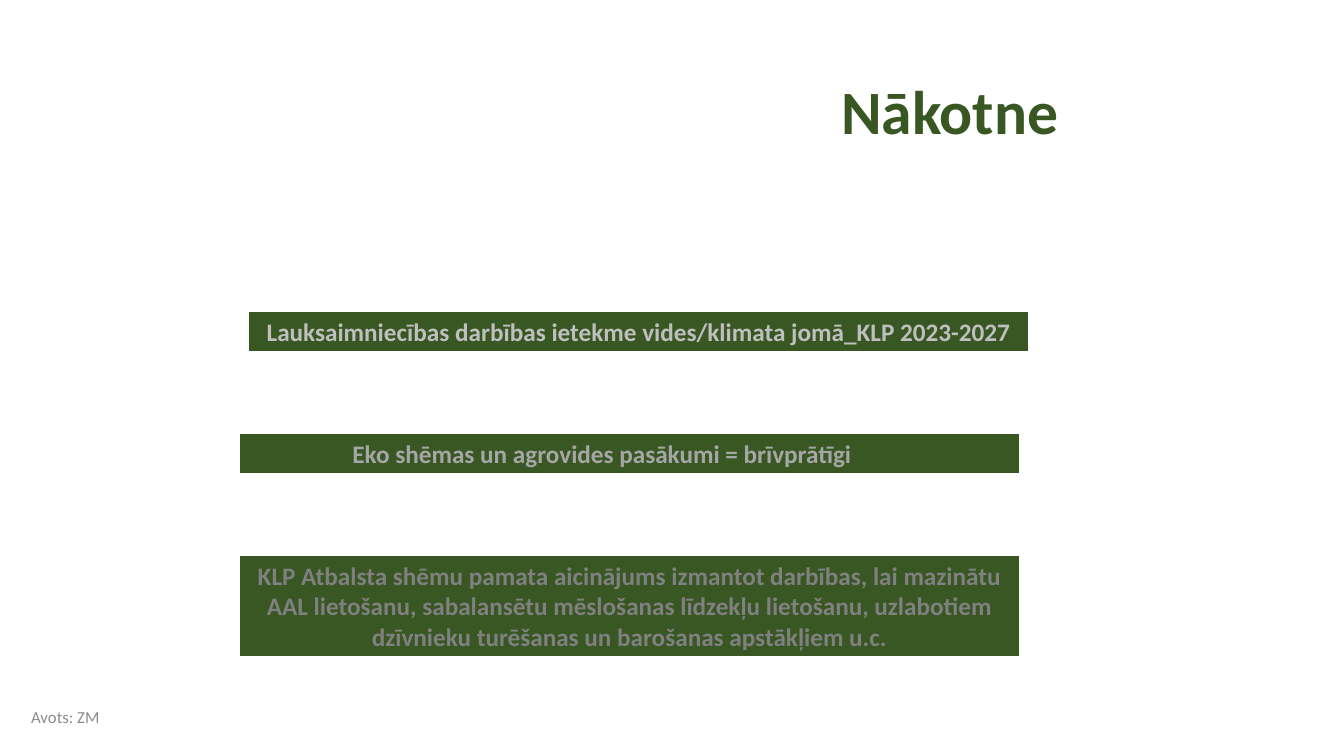
from pptx import Presentation
from pptx.dml.color import RGBColor
from pptx.enum.shapes import MSO_SHAPE
from pptx.enum.text import MSO_ANCHOR, PP_ALIGN
from pptx.util import Inches, Pt

COLORS = {
    "green": "385723",
    "white": "FFFFFF",
    "light gray": "BFBFBF",
    "medium gray": "A6A6A6",
    "dark gray": "808080",
    "source gray": "8C8C8C",
}


def write_text(shape, text, color, anchor, alignment, font_format):
    frame = shape.text_frame
    frame.word_wrap = True
    frame.vertical_anchor = anchor
    paragraph = frame.paragraphs[0]
    paragraph.alignment = alignment
    run = paragraph.add_run()
    run.text = text
    run.font.name = "Calibri"
    run.font.color.rgb = RGBColor.from_string(COLORS[color])
    for name, value in font_format.items():
        setattr(run.font, name, value)
    return frame


presentation = Presentation()
presentation.slide_width = Inches(13.33)
presentation.slide_height = Inches(7.5)
slide = presentation.slides.add_slide(presentation.slide_layouts[6])

# Title
title = slide.shapes.add_textbox(Inches(2.78), Inches(0.68), Inches(7.72), Inches(0.79))
title_frame = write_text(title, "Nākotne", "green", MSO_ANCHOR.BOTTOM, PP_ALIGN.RIGHT,
                         {"size": Pt(44), "bold": True})
title_frame.paragraphs[0].line_spacing = 0.9
for side in ("left", "top", "right", "bottom"):
    setattr(title_frame, f"margin_{side}", 0)

# Statement bars: left, height, text color, text
bars = [
    (2.46, 0.4, "light gray",
     "Lauksaimniecības darbības ietekme vides/klimata jomā_KLP 2023-2027"),
    (2.37, 0.4, "medium gray",
     "Eko shēmas un agrovides pasākumi = brīvprātīgi \t"),
    (2.37, 1.01, "dark gray",
     "KLP Atbalsta shēmu pamata aicinājums izmantot darbības, lai mazinātu AAL lietošanu, "
     "sabalansētu mēslošanas līdzekļu lietošanu, uzlabotiem dzīvnieku turēšanas un "
     "barošanas apstākļiem u.c."),
]
for index, (left, height, color, text) in enumerate(bars):
    bar = slide.shapes.add_shape(MSO_SHAPE.RECTANGLE, Inches(left), Inches(3.09 + 1.21 * index),
                                 Inches(7.75), Inches(height))
    bar.shadow.inherit = False
    bar.fill.solid()
    bar.fill.fore_color.rgb = RGBColor.from_string(COLORS["green"])
    bar.line.color.rgb = RGBColor.from_string(COLORS["white"])
    bar.line.width = Pt(1.5)
    write_text(bar, text, color, MSO_ANCHOR.TOP, PP_ALIGN.CENTER,
               {"size": Pt(18), "bold": True})

# Source note
source = slide.shapes.add_textbox(Inches(0.21), Inches(6.95), Inches(2.89), Inches(0.33))
write_text(source, "Avots: ZM", "source gray", MSO_ANCHOR.MIDDLE, PP_ALIGN.LEFT,
           {"size": Pt(12)})

presentation.save("out.pptx")
